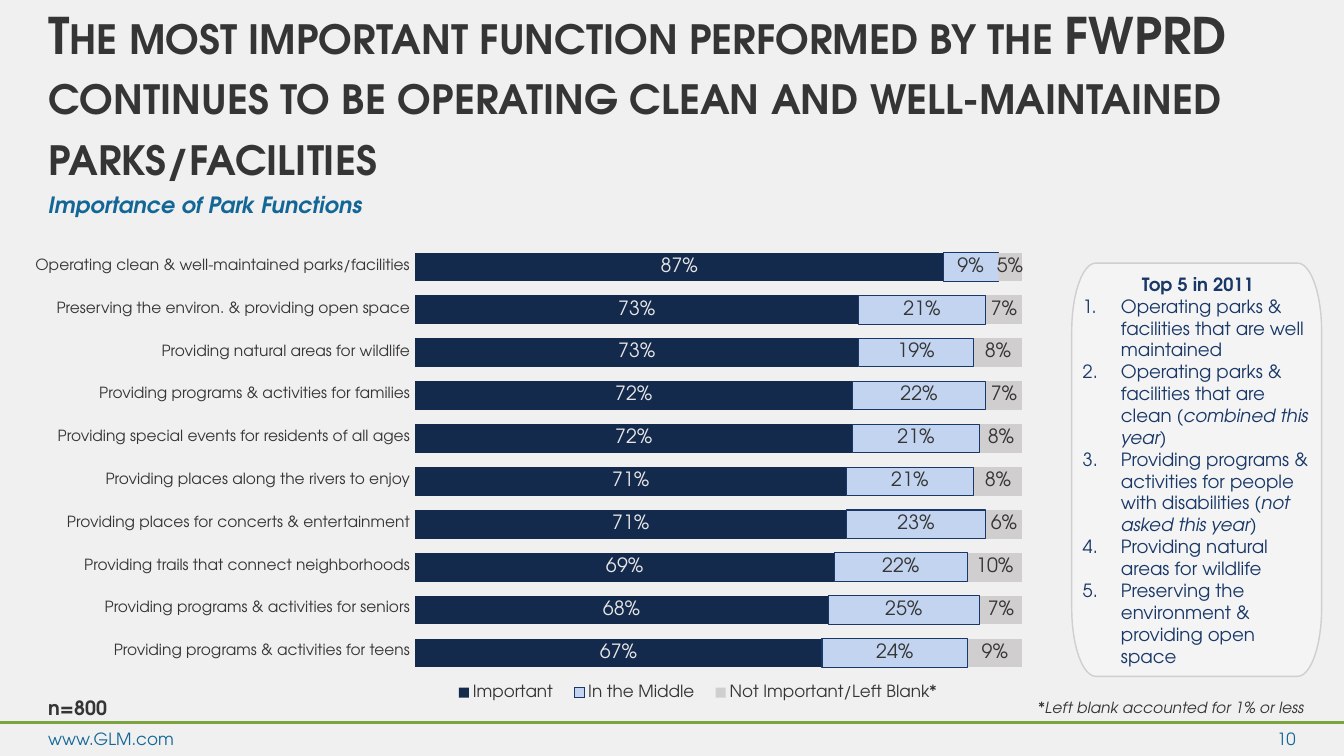
from math import cos, pi, sin

from lxml.etree import SubElement
from pptx import Presentation
from pptx.chart.data import CategoryChartData
from pptx.dml.color import RGBColor
from pptx.enum.chart import XL_CHART_TYPE, XL_LABEL_POSITION, XL_LEGEND_POSITION
from pptx.enum.shapes import MSO_CONNECTOR
from pptx.enum.text import MSO_ANCHOR, MSO_AUTO_SIZE, PP_ALIGN
from pptx.oxml import parse_xml
from pptx.oxml.ns import nsdecls, qn
from pptx.util import Inches, Pt

WIDE, HIGH = Inches(13.33), Inches(7.5)
FONT = "TeX Gyre Adventor"
HUES = {
    "back": "F0F0F0", "ink": "353535", "blue": "136797", "green": "79A440",
    "navy": "132A4D", "royal": "193867", "sky": "C2D4F0", "grey": "D0CECE",
    "pale": "E7E6E6", "white": "FFFFFF",
}
# Label, then shares: important, in the middle, not important
RANKS = [
    ("Operating clean & well-maintained parks/facilities", 0.87, 0.09, 0.05),
    ("Preserving the environ. & providing open space", 0.73, 0.21, 0.07),
    ("Providing natural areas for wildlife", 0.73, 0.19, 0.08),
    ("Providing programs & activities for families", 0.72, 0.22, 0.07),
    ("Providing special events for residents of all ages", 0.72, 0.21, 0.08),
    ("Providing places along the rivers to enjoy", 0.71, 0.21, 0.08),
    ("Providing places for concerts & entertainment", 0.71, 0.23, 0.06),
    ("Providing trails that connect neighborhoods", 0.69, 0.22, 0.1),
    ("Providing programs & activities for seniors", 0.68, 0.25, 0.07),
    ("Providing programs & activities for teens", 0.67, 0.24, 0.09),
]
# Name, fill, label colour, outline
SERIES = [
    ("Important", "navy", "pale", None),
    ("In the Middle", "sky", "ink", "royal"),
    ("Not Important/Left Blank*", "grey", "ink", None),
]
# Each item is a plain part and an optional italic part
TOP = [
    ("Operating parks & facilities that are well maintained",),
    ("Operating parks & facilities that are clean (", "combined this year)"),
    ("Providing programs & activities for people with disabilities ",
     "(not asked this year)"),
    ("Providing natural areas for wildlife",),
    ("Preserving the environment & providing open space",),
]


def hue(name):
    return RGBColor.from_string(HUES[name])


def area(x, y, w, h):
    """Turn percentages of the slide into lengths."""
    return (int(WIDE * x / 100), int(HIGH * y / 100),
            int(WIDE * w / 100), int(HIGH * h / 100))


def style(font, size, color, bold=False, italic=False):
    font.name, font.size = FONT, Pt(size)
    font.color.rgb = hue(color)
    font.bold, font.italic = bold, italic


def write(frame, *items, size=12, color="ink", bold=False, italic=False,
          align=PP_ALIGN.LEFT, gap=0, count=False, caps=False):
    """Append paragraphs; a tuple item holds plain text, then italic text."""
    for item in items:
        first = not frame.text
        para = frame.paragraphs[0] if first else frame.add_paragraph()
        para.alignment = align
        para.space_before = Pt(0 if first else gap)
        if count:
            props = para._p.get_or_add_pPr()
            props.set("marL", str(Inches(0.38)))
            props.set("indent", str(-Inches(0.38)))
            SubElement(props, qn("a:buAutoNum"), type="arabicPeriod")
        parts = (item,) if isinstance(item, str) else item
        for index, part in enumerate(parts):
            run = para.add_run()
            run.text = part
            style(run.font, size, color, bold, italic or index > 0)
            if caps:
                run._r.get_or_add_rPr().set("cap", "small")


def text(slide, box, *items, **form):
    frame = slide.shapes.add_textbox(*area(*box)).text_frame
    frame.word_wrap = True
    write(frame, *items, **form)
    return frame


def title(slide, box, words):
    shape = slide.shapes.title
    shape.left, shape.top, shape.width, shape.height = area(*box)
    frame = shape.text_frame
    frame.auto_size = MSO_AUTO_SIZE.NONE
    frame.word_wrap = True
    frame.vertical_anchor = MSO_ANCHOR.MIDDLE
    write(frame, words, size=36, bold=True, caps=True)


def rule(slide, y):
    left, top, wide, _ = area(0, y, 100, 0)
    line = slide.shapes.add_connector(
        MSO_CONNECTOR.STRAIGHT, left, top, left + wide, top)
    line.line.color.rgb, line.line.width = hue("green"), Pt(2.25)
    SubElement(line._element.spPr, qn("a:effectLst"))


def panel(slide, box, curve):
    """Draw a translucent panel whose corners are tall quarter ellipses."""
    left, top, wide, high = area(*box)
    _, _, rx, ry = area(0, 0, *curve)
    steps, spots = 12, []
    for turn in range(4):
        cx = left + (wide - rx if turn in (0, 3) else rx)
        cy = top + (high - ry if turn < 2 else ry)
        for step in range(steps + 1):
            angle = (turn + step / steps) * pi / 2
            spots.append((int(cx + rx * cos(angle)), int(cy + ry * sin(angle))))
    build = slide.shapes.build_freeform(*spots[0])
    build.add_line_segments(spots[1:], close=True)
    shape = build.convert_to_shape()
    shape.shadow.inherit = False
    shape.fill.solid()
    shape.fill.fore_color.rgb = hue("white")
    tint = shape._element.spPr.find(qn("a:solidFill"))[0]
    SubElement(tint, qn("a:alpha"), val="30000")
    shape.line.color.rgb, shape.line.width = hue("grey"), Pt(1)


def layout(node, spot, x, y, w, h, inner=False):
    """Fix the place of a chart part, in shares of the chart."""
    for old in node.findall(qn("c:layout")):
        node.remove(old)
    target = '<c:layoutTarget val="inner"/>' if inner else ""
    sizes = "".join(f'<c:{key} val="{val}"/>'
                    for key, val in (("x", x), ("y", y), ("w", w), ("h", h)))
    node.insert(spot, parse_xml(
        f'<c:layout {nsdecls("c")}><c:manualLayout>{target}'
        f'<c:xMode val="edge"/><c:yMode val="edge"/>{sizes}'
        '</c:manualLayout></c:layout>'))


def bars(slide, box):
    data = CategoryChartData(number_format="0%")
    rows = RANKS[::-1]
    data.categories = [str(n + 1) for n in range(len(rows))]
    for index, (name, *_) in enumerate(SERIES, 1):
        data.add_series(name, [row[index] for row in rows])
    chart = slide.shapes.add_chart(
        XL_CHART_TYPE.BAR_STACKED, *area(*box), data).chart
    style(chart.font, 10, "royal")
    chart.has_title = False
    axis = chart.value_axis
    axis.minimum_scale, axis.maximum_scale, axis.major_unit = 0, 1, 0.2
    axis.has_major_gridlines = False
    axis.visible = chart.category_axis.visible = False
    plot = chart.plots[0]
    plot.gap_width, plot.overlap = 50, 100
    plot.vary_by_categories = False
    for series, (_, fill, ink, edge) in zip(plot.series, SERIES):
        series.format.fill.solid()
        series.format.fill.fore_color.rgb = hue(fill)
        if edge:
            series.format.line.color.rgb = hue(edge)
            series.format.line.width = Pt(0.75)
        tags = series.data_labels
        tags.show_value = True
        tags.number_format, tags.number_format_is_linked = "0%", False
        tags.position = XL_LABEL_POSITION.CENTER
        style(tags.font, 14, ink)
    chart.has_legend = True
    legend = chart.legend
    legend.position = XL_LEGEND_POSITION.BOTTOM
    legend.include_in_layout = False
    style(legend.font, 12, "ink")
    layout(legend._element, 1, 0.16, 0.88, 0.73, 0.05)
    area_node = chart._chartSpace.chart.plotArea
    layout(area_node, 0, 0.12, 0.04, 0.87, 0.83, inner=True)


def main():
    deck = Presentation()
    deck.slide_width, deck.slide_height = WIDE, HIGH
    slide = deck.slides.add_slide(deck.slide_layouts[5])
    slide.background.fill.solid()
    slide.background.fill.fore_color.rgb = hue("back")

    rule(slide, 95.6)
    title(slide, (2.85, 5.6, 94.37, 13.87),
          "The most important function performed by the FWPRD continues "
          "to be operating clean and well-maintained parks/facilities")
    text(slide, (2.85, 24.67, 94.37, 8.67), "Importance of Park Functions",
         size=16, color="blue", bold=True, italic=True)
    bars(slide, (24.68, 29.73, 51.91, 68.4))
    text(slide, (0.75, 33.07, 30.53, 54.8), *(row[0] for row in RANKS),
         size=11, align=PP_ALIGN.RIGHT, gap=17.4)
    panel(slide, (79.74, 34.8, 18.6, 54.67), (1.8, 9.07))
    top = text(slide, (79.82, 35.47, 18.6, 56.8), "Top 5 in 2011",
               size=13, color="royal", bold=True, align=PP_ALIGN.CENTER)
    write(top, *TOP, size=13, color="royal", count=True)
    text(slide, (2.85, 91.33, 7.43, 4.53), "n=800", size=14, bold=True)
    text(slide, (76.52, 91.73, 21.91, 3.87),
         "*Left blank accounted for 1% or less", size=11, italic=True)
    text(slide, (2.85, 95.73, 14.48, 4.4), "www.GLM.com", color="blue")
    text(slide, (89.72, 95.73, 7.43, 4.4), "10", color="blue",
         align=PP_ALIGN.RIGHT)
    deck.save("out.pptx")


if __name__ == "__main__":
    main()
